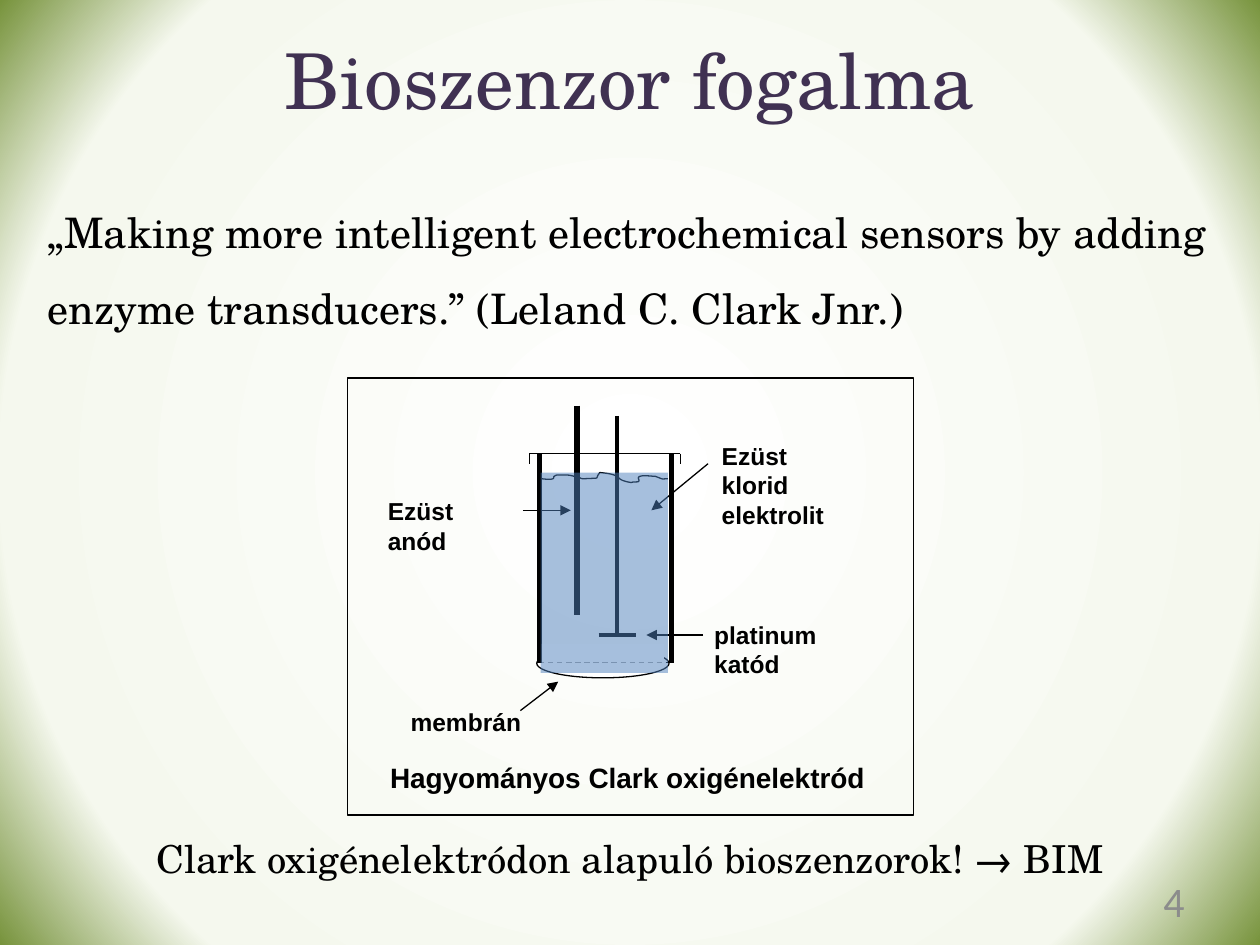
from pptx import Presentation
from pptx.dml.color import RGBColor as Rgb
from pptx.enum.dml import MSO_LINE as Dash
from pptx.enum.shapes import MSO_CONNECTOR as Link, MSO_SHAPE as Kind
from pptx.enum.text import MSO_ANCHOR as Anchor, MSO_AUTO_SIZE as Fit, PP_ALIGN as Align
from pptx.oxml import parse_xml
from pptx.oxml.ns import nsdecls
from pptx.oxml.xmlchemy import OxmlElement as Node
from pptx.util import Inches, Pt

HUE = {"ink": "000000", "title": "403152", "white": "FFFFFF", "pale": "F5F8EE",
       "green": "77933C", "blue": "4F81BD", "gray": "8C8C8C"}
SERIF, SANS = "TeX Gyre Schola", "Arial"
COLS, ROWS = 100, 75
CELL = Inches(10) // COLS


def grid(*nums):
    return [round(n * CELL) for n in nums]


def tint(hue):
    return Rgb.from_string(HUE[hue])


def paint_back(slide):
    stops = "".join(
        f'<a:gs pos="{pos * 1000}"><a:srgbClr val="{HUE[hue]}"/></a:gs>'
        for pos, hue in ((0, "white"), (80, "pale"), (100, "green")))
    slide.element.cSld.insert(0, parse_xml(
        f'<p:bg {nsdecls("p", "a")}><p:bgPr><a:gradFill rotWithShape="1">'
        f'<a:gsLst>{stops}</a:gsLst><a:path path="circle">'
        '<a:fillToRect l="50000" t="50000" r="50000" b="50000"/></a:path>'
        '</a:gradFill><a:effectLst/></p:bgPr></p:bg>'))


def place(shape, box):
    shape.left, shape.top, shape.width, shape.height = grid(*box)


def write(shape, lines, size, font=SERIF, hue="ink", bold=False,
          align=Align.LEFT, anchor=Anchor.TOP, wrap=True):
    frame = shape.text_frame
    frame.auto_size = Fit.NONE
    frame.word_wrap = wrap
    frame.vertical_anchor = anchor
    for i, line in enumerate(lines):
        para = frame.add_paragraph() if i else frame.paragraphs[0]
        para.alignment = align
        run = para.add_run()
        run.text = line
        run.font.size = Pt(size)
        run.font.name = font
        run.font.bold = bold
        run.font.color.rgb = tint(hue)
    return frame


def add_text(slide, box, lines, size, **look):
    return write(slide.shapes.add_textbox(*grid(*box)), lines, size, **look)


def add_label(slide, box, lines, size=14, **look):
    return add_text(slide, box, lines, size, font=SANS, bold=True, **look)


def add_quote(slide, text):
    body = slide.placeholders[1]
    place(body, (2.8, 13.9, 94.5, 16.2))
    para = write(body, [text], 24).paragraphs[0]
    para.line_spacing = 1.5
    para.space_before = Pt(0)
    props = para._p.get_or_add_pPr()
    props.set("marL", "0")
    props.set("indent", "0")
    props.append(Node("a:buNone"))


def add_line(slide, start, end, width=0.75, dash=False, arrow=False):
    line = slide.shapes.add_connector(Link.STRAIGHT, *grid(*start, *end))
    line.line.color.rgb = tint("ink")
    line.line.width = Pt(width)
    if dash:
        line.line.dash_style = Dash.DASH
    if arrow:
        tip = Node("a:tailEnd")
        tip.set("type", "triangle")
        line.line._get_or_add_ln().append(tip)
    line._element.spPr.append(Node("a:effectLst"))


def style(shape, fill=None, edge=True, alpha=None):
    shape.shadow.inherit = False
    if fill:
        shape.fill.solid()
        shape.fill.fore_color.rgb = tint(fill)
    else:
        shape.fill.background()
    if alpha:
        node = Node("a:alpha")
        node.set("val", str(alpha * 1000))
        shape.fill._xPr.solidFill[0].append(node)
    if edge:
        shape.line.color.rgb = tint("ink")
        shape.line.width = Pt(0.75)
    else:
        shape.line.fill.background()


def add_shape(slide, kind, box, **look):
    style(slide.shapes.add_shape(kind, *grid(*box)), **look)


def bend(a, b, c, d, t):
    u = 1 - t
    return tuple(u**3 * p + 3 * u * u * t * q + 3 * u * t * t * r + t**3 * s
                 for p, q, r, s in zip(a, b, c, d))


def add_wave(slide, knots, steps=6):
    dots = [bend(*knots[i:i + 4], n / steps)
            for i in range(0, len(knots) - 1, 3) for n in range(1, steps + 1)]
    path = slide.shapes.build_freeform(*grid(*knots[0]))
    path.add_line_segments([grid(*dot) for dot in dots], close=False)
    style(path.convert_to_shape())


def draw_cell(slide):
    left, right, rim, base = 42.8, 53.3, 36, 52.6
    add_shape(slide, Kind.OVAL, (42.6, 51.5, 10.5, 2.3), fill="white")
    for x in (left, right):
        add_line(slide, (x, rim), (x, base), 3)
    add_line(slide, (42, rim), (54, rim))
    for x in (42, 54):
        add_line(slide, (x, rim), (x, 36.8))
    add_line(slide, (left, base), (right, base), dash=True)
    add_line(slide, (45.8, 32.2), (45.8, 48.8), 3)
    add_line(slide, (49, 33), (49, 50.4), 2.25)
    add_line(slide, (47.5, 50.4), (50.5, 50.4), 2.25)
    add_wave(slide, [
        (42.9, 38), (43.2, 38), (43.6, 38.1), (43.9, 38), (44, 37.9), (43.9, 37.8),
        (44, 37.8), (44.1, 37.7), (44.2, 37.7), (44.4, 37.7), (45.5, 37.7), (45, 37.7),
        (46, 37.9), (46.1, 38), (46.3, 38), (46.3, 38), (47.9, 37.9), (47.1, 38.1),
        (47.6, 37.5), (48.4, 37.6), (48.5, 37.6), (49, 37.8), (49.2, 38.1), (49.5, 38.2),
        (50.1, 38.3), (50.3, 38.2), (50.6, 38.3), (50.7, 38.2), (50.8, 38.1), (50.5, 37.9),
        (50.8, 37.8), (51.1, 37.7), (51.6, 37.8), (52, 37.8), (52.8, 38.1), (52.4, 38),
        (53, 38)])


def add_notes(slide):
    for box, lines in (((29.8, 38.9, 12.3, 3.3), ["Ezüst anód"]),
                       ((56.3, 34.5, 13, 5.7), ["Ezüst klorid", "elektrolit"]),
                       ((55.7, 48.7, 15.8, 3.3), ["platinum katód"])):
        add_label(slide, box, lines).margin_right = grid(3)[0]
    add_label(slide, (31.6, 55.6, 10.8, 3.3), ["membrán"], wrap=False)
    for start, end in (((41.3, 56.4), (44.3, 54.1)), ((41.5, 40.5), (45.3, 40.5)),
                       ((56.2, 36.8), (51.7, 40.5)), ((55.8, 50.4), (51.3, 50.4))):
        add_line(slide, start, end, arrow=True)
    add_label(slide, (29.9, 59.9, 39.8, 3.7), ["Hagyományos Clark oxigénelektród"], 16,
              align=Align.CENTER, wrap=False)


def main():
    deck = Presentation()
    deck.slide_width, deck.slide_height = grid(COLS, ROWS)
    slide = deck.slides.add_slide(deck.slide_layouts[1])
    paint_back(slide)
    place(slide.shapes.title, (0, 0, COLS, 12.5))
    write(slide.shapes.title, ["Bioszenzor fogalma"], 44, hue="title",
          align=Align.CENTER, anchor=Anchor.MIDDLE)
    add_quote(slide, "„Making more intelligent electrochemical sensors by adding "
                     "enzyme transducers.” (Leland C. Clark Jnr.)")
    draw_cell(slide)
    add_notes(slide)
    add_shape(slide, Kind.RECTANGLE, (43, 51.1, 9.7, 1.5), fill="white", edge=False)
    add_shape(slide, Kind.RECTANGLE, (27.6, 30, 44.9, 34.7))
    add_shape(slide, Kind.RECTANGLE, (42.9, 37.5, 10.1, 15.9), fill="blue",
              edge=False, alpha=50)
    add_text(slide, (11, 65.8, 78, 4.7),
             ["Clark oxigénelektródon alapuló bioszenzorok! → BIM"], 22, align=Align.CENTER)
    add_text(slide, (71.7, 69.5, 23.3, 4), ["4"], 24, font="Calibri", hue="gray",
             align=Align.RIGHT, anchor=Anchor.MIDDLE)
    deck.save("out.pptx")


if __name__ == "__main__":
    main()
